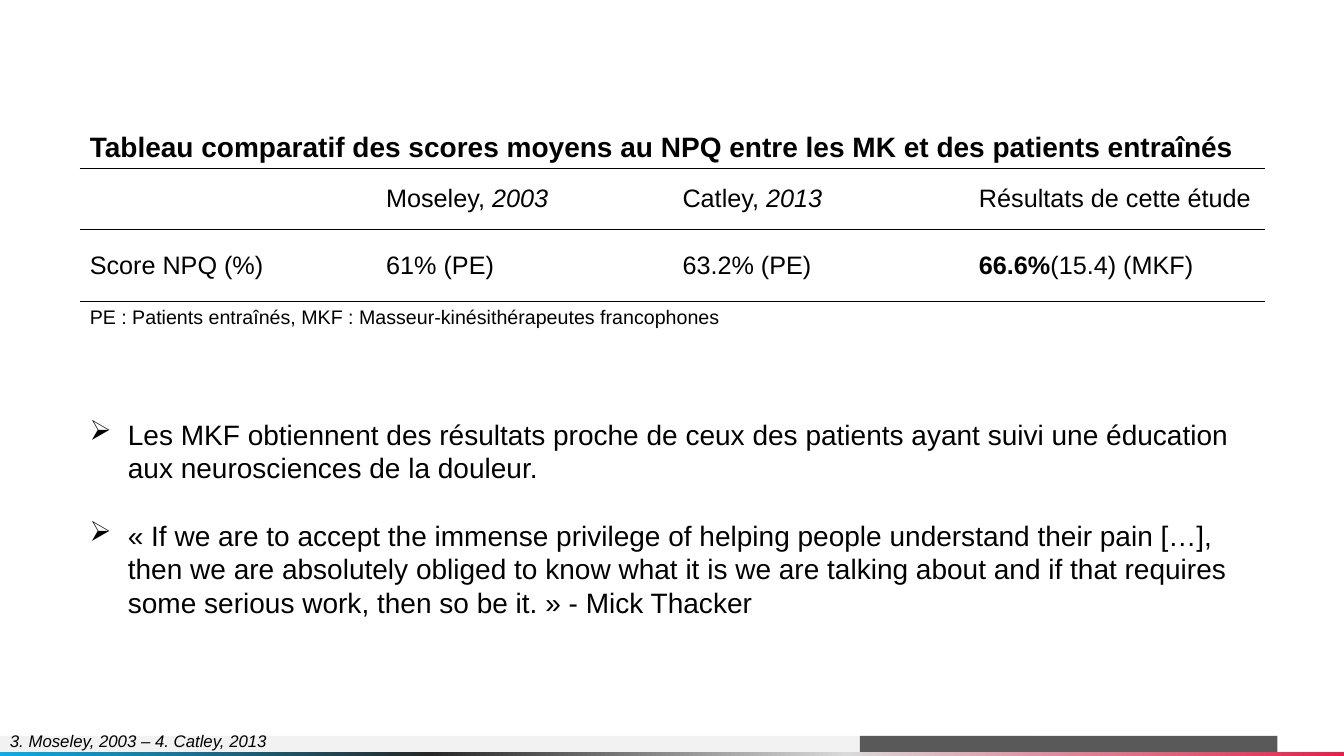
from lxml import etree
from pptx import Presentation
from pptx.dml.color import RGBColor
from pptx.enum import shapes, text
from pptx.oxml import ns, xmlchemy
from pptx.util import Inches, Pt

BLACK = RGBColor(0, 0, 0)
PALE_GREY = RGBColor(0xF2, 0xF2, 0xF2)
DARK_GREY = RGBColor(0x59, 0x59, 0x59)
STRIPE = [(0, RGBColor(0xF2, 0x19, 0x4A)), (37, RGBColor(0xD9, 0xD9, 0xD9)),
          (68, RGBColor(0x26, 0x26, 0x26)), (100, RGBColor(0x00, 0xB0, 0xF0))]
NO_STYLE = "{2D5ABB26-0587-4C30-8999-92F81FD0307C}"

TITLE = "Tableau comparatif des scores moyens au NPQ entre les MK et des patients entraînés"
LEGEND = "PE : Patients entraînés, MKF : Masseur-kinésithérapeutes francophones"
# Each cell is a list of (wording, style) spans.
SCORES = [
    [[], [("Moseley, ", ""), ("2003", "italic")], [("Catley, ", ""), ("2013", "italic")],
     [("Résultats de cette étude", "")]],
    [[("Score NPQ (%)", "")], [("61% (PE)", "")], [("63.2% (PE)", "")],
     [("66.6%", "bold"), ("(15.4) (MKF)", "")]],
]
REMARKS = [
    "Les MKF obtiennent des résultats proche de ceux des patients ayant suivi une éducation "
    "aux neurosciences de la douleur.",
    "« If we are to accept the immense privilege of helping people understand their pain […], "
    "then we are absolutely obliged to know what it is we are talking about and if that "
    "requires some serious work, then so be it. » - Mick Thacker",
]
SOURCES = "3. Moseley, 2003 – 4. Catley, 2013"


def add_span(para, wording, size, style=""):
    span = para.add_run()
    span.text = wording
    span.font.name = "Arial"
    span.font.size = Pt(size)
    span.font.color.rgb = BLACK
    span.font.bold = style == "bold"
    span.font.italic = style == "italic"


def add_bar(page, left, top, width, height):
    bar = page.shapes.add_shape(shapes.MSO_SHAPE.RECTANGLE, Inches(left), Inches(top),
                                Inches(width), Inches(height))
    bar.shadow.inherit = False
    bar.line.fill.background()
    return bar


def add_footer_bars(page, left, top, width):
    for offset, length, color in [(0, 10.29, PALE_GREY), (8.54, 4.14, DARK_GREY)]:
        bar = add_bar(page, left + offset, top, length, 0.16)
        bar.fill.solid()
        bar.fill.fore_color.rgb = color
    stripe = add_bar(page, left, top + 0.16, width, 0.04)
    stripe.fill.gradient()
    stripe.fill.gradient_angle = 180
    stops = stripe.fill._fill._gradFill.find(ns.qn("a:gsLst"))
    stops.clear()
    for position, color in STRIPE:
        stop = etree.SubElement(stops, ns.qn("a:gs"), pos=str(position * 1000))
        etree.SubElement(stop, ns.qn("a:srgbClr"), val=str(color))


def rule_below(cell):
    """Draw a thin black line along the bottom of a cell."""
    line = xmlchemy.OxmlElement("a:lnB")
    line.set("w", str(Pt(1)))
    fill = etree.SubElement(line, ns.qn("a:solidFill"))
    etree.SubElement(fill, ns.qn("a:srgbClr"), val=str(BLACK))
    cell._tc.get_or_add_tcPr().insert(0, line)


def add_score_table(page, left, top, width):
    heights = [0.41, 0.61, 0.71, 0.41]
    frame = page.shapes.add_table(4, 4, Inches(left), Inches(top), Inches(width),
                                  Inches(sum(heights)))
    table = frame.table
    table.first_row = table.horz_banding = False
    table._tbl.tblPr.find(ns.qn("a:tableStyleId")).text = NO_STYLE
    for row, height in zip(table.rows, heights):
        row.height = Inches(height)
    for cell in table.iter_cells():
        cell.fill.background()
    for row in range(3):
        for column in range(4):
            rule_below(table.cell(row, column))
    for row, wording, size, style in [(0, TITLE, 20, "bold"), (3, LEGEND, 14, "")]:
        table.cell(row, 0).merge(table.cell(row, 3))
        add_span(table.cell(row, 0).text_frame.paragraphs[0], wording, size, style)
    for row, cells in enumerate(SCORES, start=1):
        for column, spans in enumerate(cells):
            cell = table.cell(row, column)
            cell.vertical_anchor = text.MSO_ANCHOR.MIDDLE
            for wording, style in spans:
                add_span(cell.text_frame.paragraphs[0], wording, 18, style)


def add_text_frame(page, left, top, width, height):
    box = page.shapes.add_textbox(Inches(left), Inches(top), Inches(width), Inches(height))
    box.text_frame.word_wrap = True
    return box.text_frame


def add_remarks(page, left, top, width, height):
    frame = add_text_frame(page, left, top, width, height)
    for index, remark in enumerate(REMARKS):
        para = frame.add_paragraph() if index else frame.paragraphs[0]
        para.space_before = Pt(24 * index)
        add_span(para, remark, 20)
        properties = para._p.get_or_add_pPr()
        properties.set("marL", str(Inches(0.38)))
        properties.set("indent", str(-Inches(0.38)))
        etree.SubElement(properties, ns.qn("a:buFont"), typeface="Wingdings")
        etree.SubElement(properties, ns.qn("a:buChar"), char="Ø")


def add_sources(page, left, top, width, height):
    frame = add_text_frame(page, left, top, width, height)
    add_span(frame.paragraphs[0], SOURCES, 12, "italic")


def main():
    deck = Presentation()
    deck.slide_width, deck.slide_height = Inches(13.33), Inches(7.5)
    page = deck.slides.add_slide(deck.slide_layouts[6])
    add_footer_bars(page, -0.01, 7.3, 13.34)
    add_score_table(page, 0.79, 1.26, 11.76)
    add_remarks(page, 0.79, 4.09, 11.76, 2.12)
    add_sources(page, 0, 7.2, 3.28, 0.3)
    deck.save("out.pptx")


if __name__ == "__main__":
    main()
